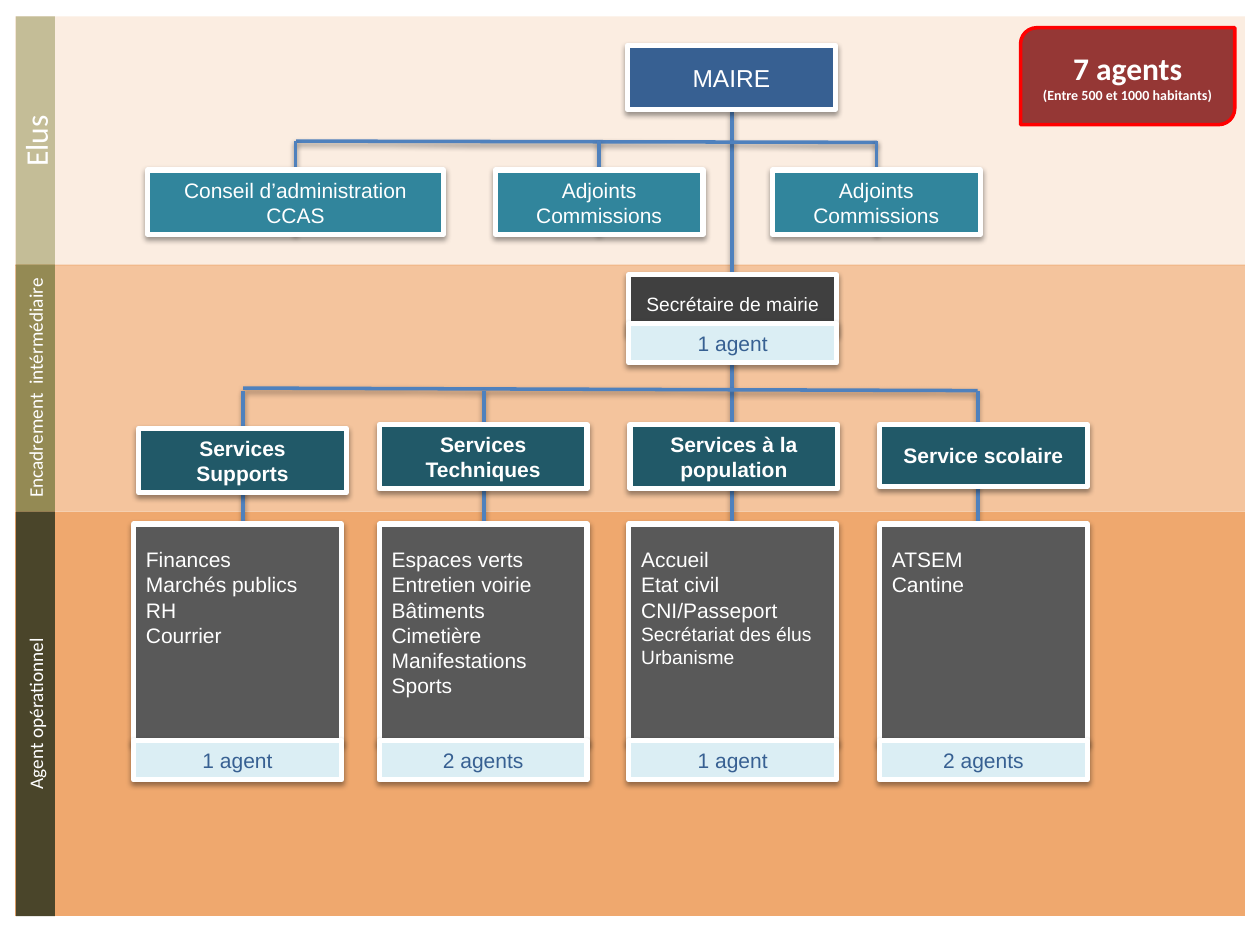
from lxml.etree import SubElement
from pptx import Presentation
from pptx.dml.color import RGBColor
from pptx.enum.shapes import MSO_CONNECTOR, MSO_SHAPE
from pptx.enum.text import MSO_ANCHOR, PP_ALIGN
from pptx.oxml.ns import qn
from pptx.util import Inches, Pt

WHITE, BLUE, ORANGE = "FFFFFF", "4F81BD", "E46C0A"
NAVY, TEAL, DARK_TEAL = "376092", "31859C", "215968"
CHARCOAL, GREY, PALE = "404040", "595959", "DBEEF4"
BOX_WIDTH = 1.65


def color(value):
    return RGBColor.from_string(value)


def add_shadow(shape):
    """Give a shape or connector a soft shadow that falls straight down."""
    effects = SubElement(shape._element.spPr, qn("a:effectLst"))
    shadow = SubElement(effects, qn("a:outerShdw"), blurRad=str(Pt(3.1)),
                        dist=str(Pt(1.6)), dir="5400000", rotWithShape="0")
    black = SubElement(shadow, qn("a:srgbClr"), val="000000")
    SubElement(black, qn("a:alpha"), val="38000")


class Chart:
    def __init__(self, page, font="Arial"):
        self.page = page
        self.font = font

    def shape(self, left, top, width, height, fill, kind=MSO_SHAPE.RECTANGLE):
        shape = self.page.shapes.add_shape(
            kind, Inches(left), Inches(top), Inches(width), Inches(height))
        shape.fill.solid()
        shape.fill.fore_color.rgb = color(fill)
        shape.line.fill.background()
        return shape

    def outline(self, shape, line, width):
        shape.line.color.rgb = color(line)
        shape.line.width = Pt(width)

    def set_text(self, shape, lines, sizes, ink=WHITE, bold=False,
                 font=None, align=PP_ALIGN.CENTER):
        frame = shape.text_frame
        frame.word_wrap = True
        frame.vertical_anchor = MSO_ANCHOR.MIDDLE
        frame.text = "\n".join(lines)
        for para, size in zip(frame.paragraphs, sizes):
            para.alignment = align
            para.font.name = font or self.font
            para.font.size = Pt(size)
            para.font.bold = bold
            para.font.color.rgb = color(ink)

    def band(self, top, height, opacity):
        band = self.shape(0.12, top, 9.76, height, ORANGE)
        band.shadow.inherit = False
        fill = band._element.spPr.find(qn("a:solidFill"))
        SubElement(fill[0], qn("a:alpha"), val=str(opacity * 1000))

    def side_label(self, top, length, text, size, fill):
        """Draw a level title that reads upwards along the left edge."""
        thickness = 0.31
        label = self.shape(0.28 - length / 2, top + (length - thickness) / 2,
                           length, thickness, fill)
        label.rotation = 270
        label.shadow.inherit = False
        self.set_text(label, [text], [size], font="Calibri")

    def link(self, x1, y1, x2, y2):
        link = self.page.shapes.add_connector(
            MSO_CONNECTOR.STRAIGHT, Inches(x1), Inches(y1), Inches(x2), Inches(y2))
        self.outline(link, BLUE, 2)
        add_shadow(link)

    def box(self, left, top, height, fill, lines, size=12,
            width=BOX_WIDTH, **style):
        box = self.shape(left, top, width, height, fill)
        self.outline(box, WHITE, 3)
        add_shadow(box)
        self.set_text(box, lines, [size] * len(lines), **style)
        return box

    def tasks(self, left, lines, small=()):
        box = self.box(left, 4.16, 1.74, GREY, lines, align=PP_ALIGN.LEFT)
        frame = box.text_frame
        frame.vertical_anchor = MSO_ANCHOR.TOP
        frame.margin_top = Inches(0.18)
        for para in frame.paragraphs:
            if para.text in small:
                para.font.size = Pt(11)

    def headcount(self, left, top, count):
        text = f"{count} agent" + ("s" if count > 1 else "")
        self.box(left, top, 0.31, PALE, [text], ink=NAVY)

    def badge(self, lines, sizes):
        badge = self.shape(8.1, 0.22, 1.7, 0.77, "953735",
                           MSO_SHAPE.ROUND_2_DIAG_RECTANGLE)
        self.outline(badge, "FF0000", 2)
        badge.shadow.inherit = False
        self.set_text(badge, lines, sizes, bold=True, font="Calibri")


LEVELS = [  # top, height, opacity, title, size, label fill
    (0.13, 1.98, 12, "Elus", 18, "C4BD97"),
    (2.1, 1.96, 40, "Encadrement  intérmédiaire", 11, "948A54"),
    (4.06, 3.21, 59, "Agent opérationnel", 11, "4A452A"),
]
COUNCILS = [  # left, width, lines
    (1.17, 2.35, ["Conseil d’administration", "CCAS"]),
    (3.93, BOX_WIDTH, ["Adjoints", "Commissions"]),
    (6.13, BOX_WIDTH, ["Adjoints", "Commissions"]),
]
SERVICES = [  # title left, title top, title height, title, tasks left, tasks, agents
    (1.1, 3.4, 0.51, "Services Supports", 1.06,
     ["Finances", "Marchés publics", "RH", "Courrier"], 1),
    (3.01, 3.37, 0.51, "Services Techniques", 3.01,
     ["Espaces verts", "Entretien voirie", "Bâtiments", "Cimetière",
      "Manifestations", "Sports"], 2),
    (5, 3.37, 0.51, "Services à la population", 4.99,
     ["Accueil", "Etat civil", "CNI/Passeport", "Secrétariat des élus",
      "Urbanisme"], 1),
    (6.98, 3.37, 0.49, "Service scolaire", 6.98, ["ATSEM", "Cantine"], 2),
]
SERVICE_LINKS = [1.93, 3.84, 7.76]


def main():
    deck = Presentation()
    deck.slide_width, deck.slide_height = Inches(10), Inches(7.5)
    chart = Chart(deck.slides.add_slide(deck.slide_layouts[6]))

    for top, height, opacity, title, size, fill in LEVELS:
        chart.band(top, height, opacity)
        chart.side_label(top, height, title, size, fill)

    chart.link(5.81, 0.88, 5.81, 4.3)
    chart.link(2.35, 1.12, 6.96, 1.13)
    for left, width, lines in COUNCILS:
        middle = left + width / 2
        chart.link(middle, 1.86, middle, 1.12)
    chart.link(1.93, 3.08, 7.76, 3.1)
    for x in SERVICE_LINKS:
        chart.link(x, 4.2, x, 3.1)

    chart.box(4.98, 0.36, 0.51, NAVY, ["MAIRE"], size=14)
    chart.badge(["7 agents", "(Entre 500 et 1000 habitants)"], [18, 8])
    for left, width, lines in COUNCILS:
        chart.box(left, 1.35, 0.51, TEAL, lines, width=width)
    chart.box(4.99, 2.18, 0.47, CHARCOAL, ["Secrétaire de mairie"], size=11)
    chart.headcount(4.99, 2.57, 1)

    for left, top, height, title, tasks_left, tasks, agents in SERVICES:
        chart.box(left, top, height, DARK_TEAL, [title], bold=True)
        chart.tasks(tasks_left, tasks, small=("Secrétariat des élus", "Urbanisme"))
        chart.headcount(tasks_left, 5.88, agents)

    deck.save("out.pptx")


if __name__ == "__main__":
    main()
